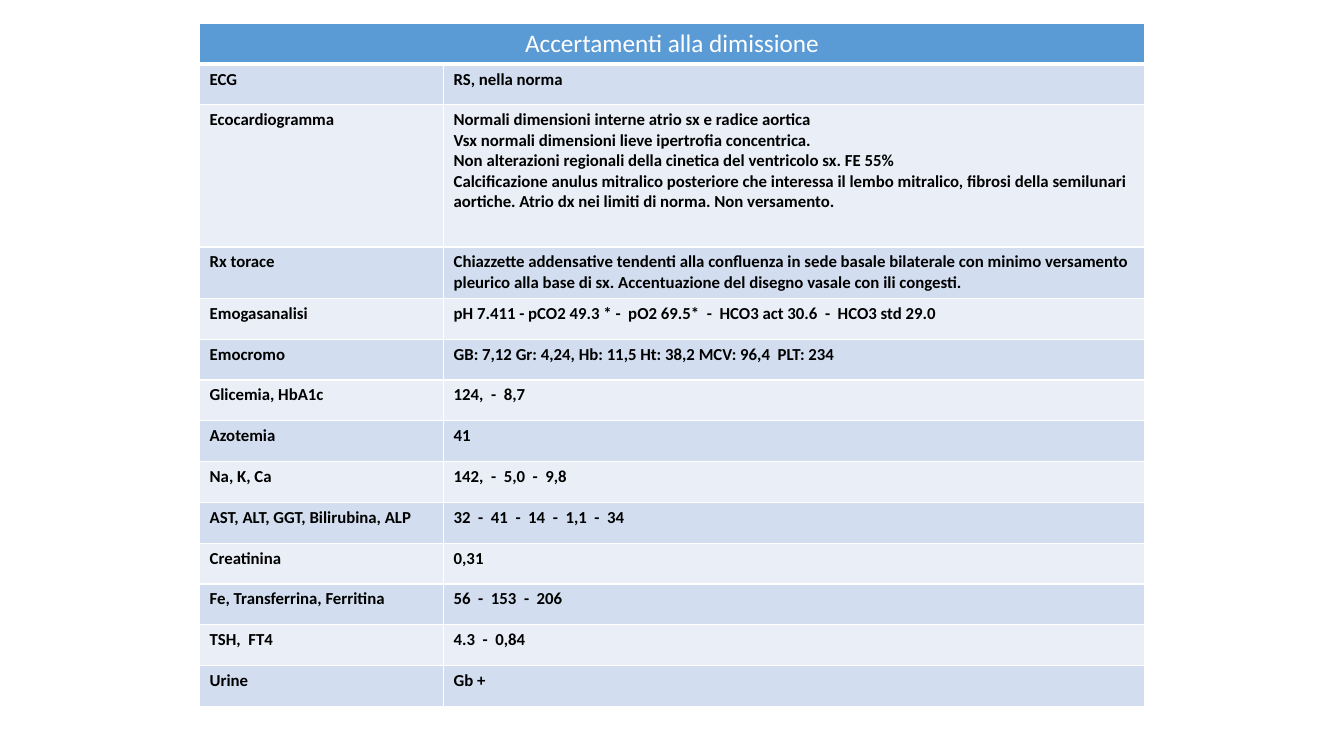
from dataclasses import dataclass

from lxml.etree import SubElement
from pptx import Presentation
from pptx.dml.color import RGBColor
from pptx.enum.text import PP_ALIGN as Align
from pptx.oxml.ns import qn
from pptx.util import Inches, Pt

EXAMS = [
    ("ECG", "RS, nella norma"),
    ("Ecocardiogramma",
     "Normali dimensioni interne atrio sx e radice aortica\n"
     "Vsx normali dimensioni lieve ipertrofia concentrica.\n"
     "Non alterazioni regionali della cinetica del ventricolo sx. FE 55%\n"
     "Calcificazione anulus mitralico posteriore che interessa il lembo mitralico, "
     "fibrosi della semilunari aortiche. Atrio dx nei limiti di norma. Non versamento."),
    ("Rx torace",
     "Chiazzette addensative tendenti alla confluenza in sede basale bilaterale con "
     "minimo versamento pleurico alla base di sx. Accentuazione del disegno vasale "
     "con ili congesti."),
    ("Emogasanalisi",
     "pH 7.411 - pCO2 49.3 * -  pO2 69.5*  -  HCO3 act 30.6  -  HCO3 std 29.0"),
    ("Emocromo", "GB: 7,12 Gr: 4,24, Hb: 11,5 Ht: 38,2 MCV: 96,4  PLT: 234"),
    ("Glicemia, HbA1c", "124,  -  8,7"),
    ("Azotemia", "41"),
    ("Na, K, Ca", "142,  -  5,0  -  9,8"),
    ("AST, ALT, GGT, Bilirubina, ALP", "32  -  41  -  14  -  1,1  -  34"),
    ("Creatinina", "0,31"),
    ("Fe, Transferrina, Ferritina", "56  -  153  -  206"),
    ("TSH,  FT4", "4.3  -  0,84"),
    ("Urine", "Gb +"),
]
TALL_ROWS = {"Ecocardiogramma": 1.41, "Rx torace": 0.51}
TABLE_HEIGHT = 6.78


def color(value):
    return RGBColor.from_string(value)


@dataclass
class SlideBuilder:
    """Holds the style and the current slide, and draws its elements."""

    slide: object
    font: str = "Calibri"
    header_fill: str = "5B9BD5"
    bands: tuple = ("D2DEEF", "EAEFF7")
    border: str = "FFFFFF"

    def borders(self, cell, bottom):
        properties = cell._tc.get_or_add_tcPr()
        for side, width in (("L", 1), ("R", 1), ("T", 1), ("B", bottom)):
            line = SubElement(properties, qn(f"a:ln{side}"), w=str(Pt(width)))
            SubElement(SubElement(line, qn("a:solidFill")), qn("a:srgbClr"), val=self.border)

    def cell(self, cell, text, fill, size=12, ink="000000", bold=True, align=Align.LEFT, bottom=1):
        self.borders(cell, bottom)
        cell.fill.solid()
        cell.fill.fore_color.rgb = color(fill)
        cell.text_frame.text = text
        for paragraph in cell.text_frame.paragraphs:
            paragraph.alignment = align
            for run in paragraph.runs:
                run.font.name = self.font
                run.font.size = Pt(size)
                run.font.bold = bold
                run.font.color.rgb = color(ink)

    def table(self, title, rows, left, top, widths, height):
        shape = self.slide.shapes.add_table(
            len(rows) + 1, len(widths), Inches(left), Inches(top),
            Inches(sum(widths)), Inches(height))
        table = shape.table
        for column, width in zip(table.columns, widths):
            column.width = Inches(width)
        regular = (height - sum(TALL_ROWS.values())) / (len(rows) + 1 - len(TALL_ROWS))
        table.rows[0].height = Inches(regular)
        header = table.cell(0, 0)
        header.merge(table.cell(0, len(widths) - 1))
        self.cell(header, title, self.header_fill, size=18, ink="FFFFFF",
                  bold=False, align=Align.CENTER, bottom=3)
        for index, texts in enumerate(rows):
            table.rows[index + 1].height = Inches(TALL_ROWS.get(texts[0], regular))
            for column, text in enumerate(texts):
                self.cell(table.cell(index + 1, column), text, self.bands[index % 2])


def main():
    presentation = Presentation()
    presentation.slide_width = Inches(13.33)
    presentation.slide_height = Inches(7.5)
    builder = SlideBuilder(presentation.slides.add_slide(presentation.slide_layouts[6]))
    builder.table("Accertamenti alla dimissione", EXAMS, 1.98, 0.23, (2.42, 6.95), TABLE_HEIGHT)
    presentation.save("out.pptx")


if __name__ == "__main__":
    main()
